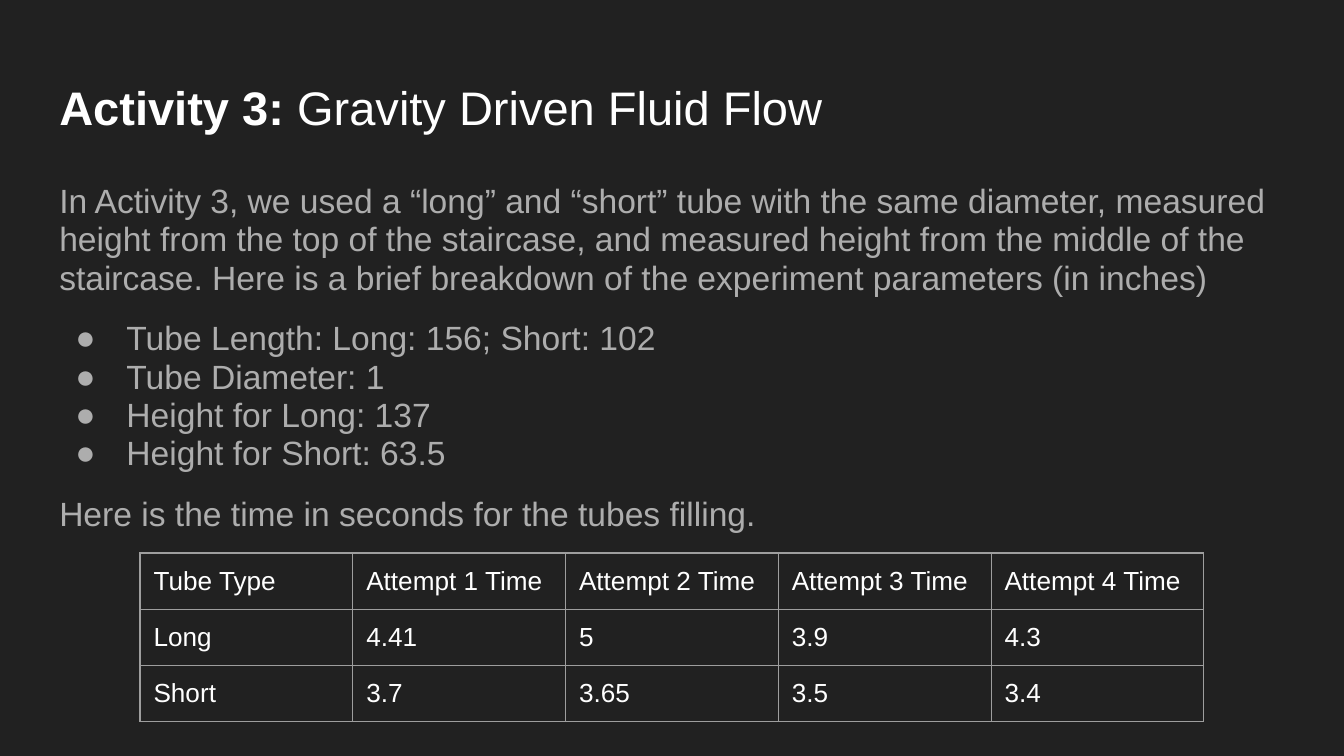
from lxml import etree
from pptx import Presentation
from pptx.dml.color import RGBColor
from pptx.enum.text import MSO_ANCHOR, MSO_AUTO_SIZE, PP_ALIGN
from pptx.oxml.ns import qn
from pptx.util import Inches, Pt

LEFT = PP_ALIGN.LEFT
TOP = MSO_ANCHOR.TOP
FIXED = MSO_AUTO_SIZE.NONE
WIDTH = Inches(10)
HEIGHT = WIDTH * 9 // 16
INSET = Inches(0.1)
FONT = "Arial"
COLORS = {"page": "212121", "title": "FFFFFF", "body": "ADADAD", "border": "9E9E9E"}

TITLE = [("Activity 3:", True), (" Gravity Driven Fluid Flow", False)]
INTRO = (
    "In Activity 3, we used a “long” and “short” tube with the same diameter, "
    "measured height from the top of the staircase, and measured height from the "
    "middle of the staircase. Here is a brief breakdown of the experiment "
    "parameters (in inches)"
)
PARAMETERS = [
    "Tube Length: Long: 156; Short: 102",
    "Tube Diameter: 1",
    "Height for Long: 137",
    "Height for Short: 63.5",
]
CLOSING = "Here is the time in seconds for the tubes filling."
TIMES = [
    ["Tube Type"] + [f"Attempt {number} Time" for number in range(1, 5)],
    ["Long", "4.41", "5", "3.9", "4.3"],
    ["Short", "3.7", "3.65", "3.5", "3.4"],
]


def share(left, top, width, height):
    """Turn percentages of the slide into a box of lengths."""
    return [int(part * side / 100) for part, side in
            zip((left, top, width, height), (WIDTH, HEIGHT, WIDTH, HEIGHT))]


def add_span(para, text, size, color, bold=False):
    """Add one formatted run to a paragraph."""
    span = para.add_run()
    span.text = text
    span.font.name = FONT
    span.font.size = Pt(size)
    span.font.bold = bold
    span.font.color.rgb = RGBColor.from_string(COLORS[color])


def place(holder, box):
    """Move a placeholder to its box and return its prepared text frame."""
    holder.left, holder.top, holder.width, holder.height = box
    frame = holder.text_frame
    frame.margin_left = frame.margin_right = INSET
    frame.margin_top = frame.margin_bottom = INSET
    frame.vertical_anchor = TOP
    frame.auto_size = FIXED
    frame.word_wrap = True
    return frame


def set_bullet(para, bulleted):
    """Give a paragraph a hanging bullet, or none."""
    props = para._p.get_or_add_pPr()
    props.set("marL", str(Inches(0.5) if bulleted else 0))
    props.set("indent", str(Inches(-0.38) if bulleted else 0))
    if not bulleted:
        etree.SubElement(props, qn("a:buNone"))
        return
    color = etree.SubElement(props, qn("a:buClr"))
    etree.SubElement(color, qn("a:srgbClr"), val=COLORS["body"])
    etree.SubElement(props, qn("a:buFont"), typeface=FONT)
    etree.SubElement(props, qn("a:buChar"), char="●")


def set_borders(cell):
    """Draw a thin line on each side of a table cell."""
    props = cell._tc.get_or_add_tcPr()
    for side in ("lnL", "lnR", "lnT", "lnB"):
        line = etree.SubElement(props, qn(f"a:{side}"), w=str(Pt(0.75)))
        fill = etree.SubElement(line, qn("a:solidFill"))
        etree.SubElement(fill, qn("a:srgbClr"), val=COLORS["border"])


def fill_title(page, box):
    """Write the heading in the title placeholder."""
    para = place(page.shapes.title, box).paragraphs[0]
    para.alignment = LEFT
    for text, bold in TITLE:
        add_span(para, text, 25.2, "title", bold)


def fill_body(page, box):
    """Write the introduction, the parameter list and the closing line."""
    frame = place(page.placeholders[1], box)
    rows = [(INTRO, False, 0, 0)]
    rows += [(text, True, 0 if index else 12, 0) for index, text in enumerate(PARAMETERS)]
    rows.append((CLOSING, False, 12, 12))
    for index, (text, bulleted, before, after) in enumerate(rows):
        para = frame.add_paragraph() if index else frame.paragraphs[0]
        para.alignment = LEFT
        para.line_spacing = 0.95
        para.space_before, para.space_after = Pt(before), Pt(after)
        set_bullet(para, bulleted)
        add_span(para, text, 18, "body")


def add_times(page, box):
    """Add the table of filling times."""
    table = page.shapes.add_table(len(TIMES), len(TIMES[0]), *box).table
    table.first_row = table.horz_banding = False
    for row, texts in enumerate(TIMES):
        for column, text in enumerate(texts):
            cell = table.cell(row, column)
            cell.margin_left = cell.margin_right = INSET
            cell.margin_top = cell.margin_bottom = INSET
            set_borders(cell)
            cell.fill.background()
            add_span(cell.text_frame.paragraphs[0], text, 14, "title")


def main():
    """Build the slide and save the deck."""
    deck = Presentation()
    deck.slide_width, deck.slide_height = WIDTH, HEIGHT
    page = deck.slides.add_slide(deck.slide_layouts[1])
    page.background.fill.solid()
    page.background.fill.fore_color.rgb = RGBColor.from_string(COLORS["page"])
    fill_title(page, share(3.41, 8.65, 93.18, 11.14))
    fill_body(page, share(3.41, 22.4, 93.18, 53.15))
    add_times(page, share(10.42, 73.15, 79.17, 22.35))
    deck.save("out.pptx")


if __name__ == "__main__":
    main()
